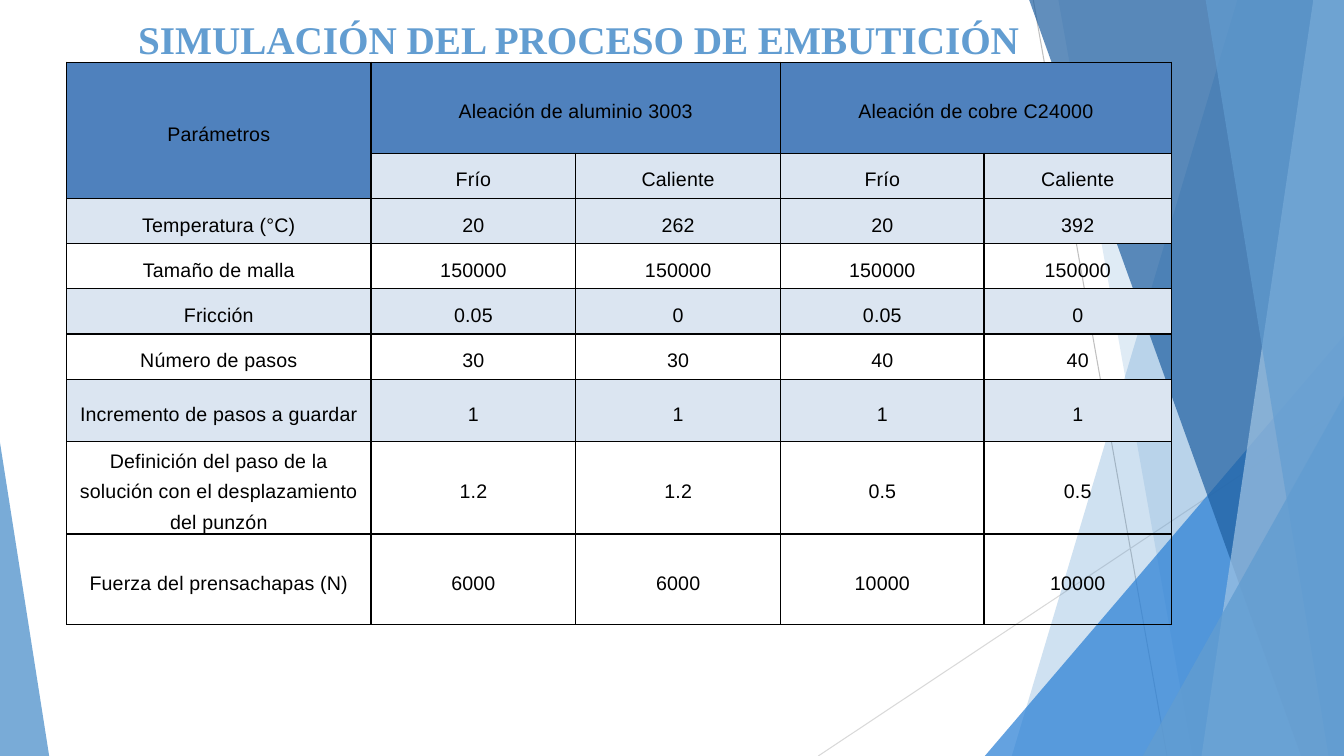
from typing import NamedTuple

from lxml import etree
from pptx import Presentation
from pptx import util as u
from pptx.dml.color import RGBColor
from pptx.enum import shapes, text
from pptx.oxml import ns

COLORS = {
    "sky": "629DD1",
    "bright": "297FD5",
    "deep": "1F5FA0",
    "pale": "A1C4E3",
    "gray": "BFBFBF",
    "light_gray": "D9D9D9",
    "header": "4F81BD",
    "band": "DBE5F1",
    "black": "000000",
}
WIDTH, HEIGHT = 33.87, 19.05
FACET_TOP = -0.02


class Ray(NamedTuple):
    start: tuple[float, float]
    end: tuple[float, float]
    color: str


class Facet(NamedTuple):
    top_left: float
    bottom_left: float
    color: str
    opacity: int


class Corner(NamedTuple):
    left: float
    top: float
    width: float
    apex: float
    color: str
    opacity: int


class Row(NamedTuple):
    height: float
    values: tuple[str, ...]
    fills: tuple[str | None, ...]


RAYS = [
    Ray((26.04, 0), (29.41, HEIGHT), "gray"),
    Ray((WIDTH, 10.24), (20.62, HEIGHT), "light_gray"),
]
DECORATION = [
    Facet(31.19, 25.5, "sky", 30),
    Facet(26.67, 30.05, "sky", 20),
    Corner(24.82, 8.46, 9.05, 1, "bright", 72),
    Facet(25.93, 32.79, "deep", 70),
    Facet(33.1, 30.28, "pale", 70),
    Facet(30.38, 33.48, "sky", 65),
    Corner(28.8, 9.98, 5.07, 1, "sky", 80),
    Corner(0, 11.15, 1.24, 0, "sky", 85),
]
COLUMN_WIDTHS = [7.67, 5.16, 5.16, 5.13, 4.72]
BAND = ("band",) * 5
CLEAR = (None,) * 5
ROWS = [
    Row(2.29, ("Parámetros", "Aleación de aluminio 3003", "", "Aleación de cobre C24000", ""), ("header",) * 5),
    Row(1.14, ("", "Frío", "Caliente", "Frío", "Caliente"), ("header",) + BAND[1:]),
    Row(1.14, ("Temperatura (°C)", "20", "262", "20", "392"), BAND),
    Row(1.14, ("Tamaño de malla", "150000", "150000", "150000", "150000"), CLEAR),
    Row(1.14, ("Fricción", "0.05", "0", "0.05", "0"), BAND),
    Row(1.14, ("Número de pasos", "30", "30", "40", "40"), CLEAR),
    Row(1.57, ("Incremento de pasos a guardar", "1", "1", "1", "1"), BAND),
    Row(2.32, ("Definición del paso de la solución con el desplazamiento del punzón",
               "1.2", "1.2", "0.5", "0.5"), CLEAR),
    Row(2.29, ("Fuerza del prensachapas (N)", "6000", "6000", "10000", "10000"), CLEAR),
]
MERGES = [((0, 0), (1, 0)), ((0, 1), (0, 2)), ((0, 3), (0, 4))]


def rgb(name: str) -> RGBColor:
    return RGBColor.from_string(COLORS[name])


def draw_ray(slide, ray: Ray) -> None:
    connector = slide.shapes.add_connector(
        shapes.MSO_CONNECTOR.STRAIGHT, *(u.Cm(value) for value in ray.start + ray.end))
    connector.line.color.rgb = rgb(ray.color)
    connector.line.width = u.Pt(0.75)
    etree.SubElement(connector._element.spPr, ns.qn("a:effectLst"))


def paint(shape, color: str, opacity: int) -> None:
    shape.shadow.inherit = False
    shape.line.fill.background()
    shape.fill.solid()
    shape.fill.fore_color.rgb = rgb(color)
    color_element = shape._element.spPr.find(".//" + ns.qn("a:srgbClr"))
    etree.SubElement(color_element, ns.qn("a:alpha"), val=str(opacity * 1000))


def draw_facet(slide, facet: Facet) -> None:
    corners = [(facet.top_left, FACET_TOP), (WIDTH, FACET_TOP), (WIDTH, HEIGHT), (facet.bottom_left, HEIGHT)]
    points = [(u.Cm(x), u.Cm(y)) for x, y in corners]
    builder = slide.shapes.build_freeform(*points[0])
    builder.add_line_segments(points[1:], close=True)
    paint(builder.convert_to_shape(), facet.color, facet.opacity)


def draw_corner(slide, corner: Corner) -> None:
    shape = slide.shapes.add_shape(
        shapes.MSO_SHAPE.ISOSCELES_TRIANGLE, u.Cm(corner.left), u.Cm(corner.top),
        u.Cm(corner.width), u.Cm(HEIGHT - corner.top))
    shape.adjustments[0] = corner.apex
    paint(shape, corner.color, corner.opacity)


def draw_title(slide) -> None:
    box = slide.shapes.add_textbox(u.Cm(3.23), u.Cm(0.18), u.Cm(23.88), u.Cm(1.75))
    frame = box.text_frame
    frame.word_wrap = True
    frame.vertical_anchor = text.MSO_ANCHOR.MIDDLE
    paragraph = frame.paragraphs[0]
    paragraph.text = "SIMULACIÓN DEL PROCESO DE EMBUTICIÓN"
    paragraph.line_spacing = 0.9
    paragraph.font.name = "Times New Roman"
    paragraph.font.size = u.Pt(28)
    paragraph.font.bold = True
    paragraph.font.color.rgb = rgb("sky")


def add_borders(cell) -> None:
    properties = cell._tc.get_or_add_tcPr()
    for index, side in enumerate(("lnL", "lnR", "lnT", "lnB")):
        border = etree.Element(ns.qn(f"a:{side}"), w=str(u.Pt(1)))
        fill = etree.SubElement(border, ns.qn("a:solidFill"))
        etree.SubElement(fill, ns.qn("a:srgbClr"), val=COLORS["black"])
        properties.insert(index, border)


def fill_cell(cell, value: str, fill: str | None) -> None:
    cell.margin_left = cell.margin_right = u.Cm(0.15)
    cell.margin_top = cell.margin_bottom = 0
    cell.vertical_anchor = text.MSO_ANCHOR.MIDDLE
    if fill:
        cell.fill.solid()
        cell.fill.fore_color.rgb = rgb(fill)
    else:
        cell.fill.background()
    add_borders(cell)
    paragraph = cell.text_frame.paragraphs[0]
    paragraph.text = value
    paragraph.alignment = text.PP_ALIGN.CENTER
    paragraph.line_spacing = u.Pt(22)
    paragraph.font.name = "Arial"
    paragraph.font.size = u.Pt(14)
    paragraph.font.color.rgb = rgb("black")
    paragraph._p.pPr.find(ns.qn("a:defRPr")).set("spc", "10")


def draw_table(slide) -> None:
    table = slide.shapes.add_table(
        len(ROWS), len(COLUMN_WIDTHS), u.Cm(1.68), u.Cm(1.57),
        u.Cm(sum(COLUMN_WIDTHS)), u.Cm(sum(row.height for row in ROWS))).table
    table.first_row = table.horz_banding = False
    for column, width in zip(table.columns, COLUMN_WIDTHS):
        column.width = u.Cm(width)
    for table_row, row in zip(table.rows, ROWS):
        table_row.height = u.Cm(row.height)
        for cell, value, fill in zip(table_row.cells, row.values, row.fills):
            fill_cell(cell, value, fill)
    for first, last in MERGES:
        table.cell(*first).merge(table.cell(*last))


def main() -> None:
    presentation = Presentation()
    presentation.slide_width = u.Cm(WIDTH)
    presentation.slide_height = u.Cm(HEIGHT)
    slide = presentation.slides.add_slide(presentation.slide_layouts[6])
    for ray in RAYS:
        draw_ray(slide, ray)
    for item in DECORATION:
        if isinstance(item, Facet):
            draw_facet(slide, item)
        else:
            draw_corner(slide, item)
    draw_title(slide)
    draw_table(slide)
    presentation.save("out.pptx")


if __name__ == "__main__":
    main()
